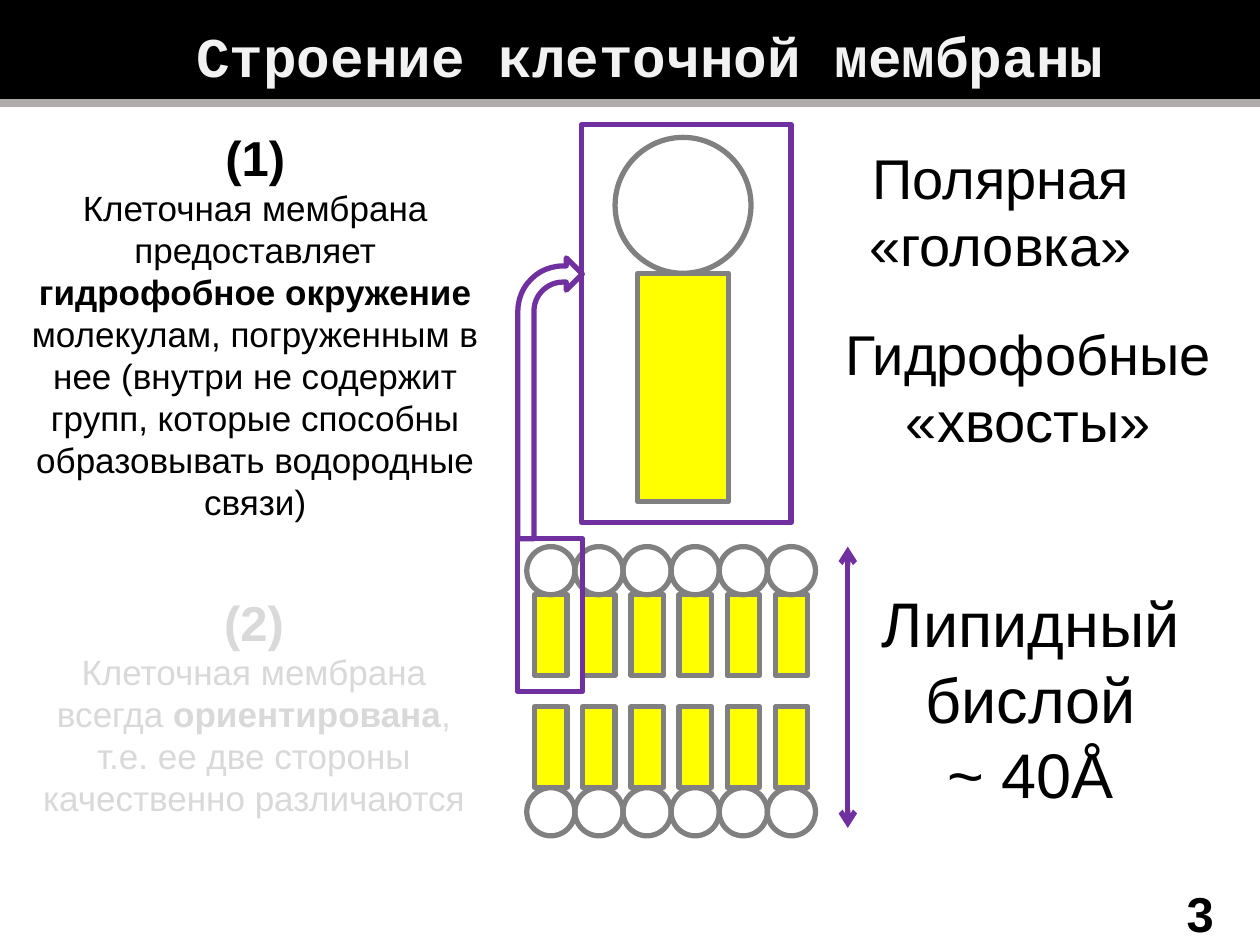
from lxml import etree
from pptx import Presentation
from pptx.dml.color import RGBColor
from pptx.enum.shapes import MSO_CONNECTOR, MSO_SHAPE
from pptx.enum.text import MSO_ANCHOR, PP_ALIGN
from pptx.oxml.ns import qn
from pptx.util import Cm, Pt

RECT, OVAL, BENT = MSO_SHAPE.RECTANGLE, MSO_SHAPE.OVAL, MSO_SHAPE.BENT_ARROW
LINE = MSO_CONNECTOR.STRAIGHT
TOP, MID = MSO_ANCHOR.TOP, MSO_ANCHOR.MIDDLE
CENTER = PP_ALIGN.CENTER

BLACK, WHITE, PALE = "000000", "FFFFFF", "F2F2F2"
GREY, SILVER = "808080", "AFABAB"
YELLOW, PURPLE = "FFFF00", "7030A0"


def color(code):
    return RGBColor.from_string(code)


class Page:
    """Holds the slide and the style shared by its elements."""

    font = "Arial"
    stroke = 3

    def __init__(self, slide):
        self.slide = slide
        self.shapes = slide.shapes

    def shape(self, kind, x, y, w, h, fill=None, line=None, alpha=None):
        item = self.shapes.add_shape(kind, Cm(x), Cm(y), Cm(w), Cm(h))
        item.shadow.inherit = False
        if fill:
            item.fill.solid()
            item.fill.fore_color.rgb = color(fill)
        else:
            item.fill.background()
        if alpha:
            tint = item.fill._xPr.find(qn("a:solidFill"))[0]
            etree.SubElement(tint, qn("a:alpha")).set("val", str(alpha * 1000))
        if line:
            item.line.color.rgb = color(line)
            item.line.width = Pt(self.stroke)
        else:
            item.line.fill.background()
        return item

    def line(self, x1, y1, x2, y2, tone, width, arrows=False):
        item = self.shapes.add_connector(LINE, Cm(x1), Cm(y1), Cm(x2), Cm(y2))
        item.line.color.rgb = color(tone)
        item.line.width = Pt(width)
        props = item._element.spPr
        if arrows:
            ln = props.find(qn("a:ln"))
            for end in ("a:headEnd", "a:tailEnd"):
                etree.SubElement(ln, qn(end)).set("type", "arrow")
        etree.SubElement(props, qn("a:effectLst"))

    def text(self, x, y, w, h, paras, font=None, tone=BLACK, anchor=TOP):
        """Each paragraph is a list of runs: (words, size, bold)."""
        box = self.shapes.add_textbox(Cm(x), Cm(y), Cm(w), Cm(h))
        frame = box.text_frame
        frame.word_wrap = True
        frame.vertical_anchor = anchor
        for i, runs in enumerate(paras):
            para = frame.add_paragraph() if i else frame.paragraphs[0]
            para.alignment = CENTER
            for words, size, bold in runs:
                run = para.add_run()
                run.text = words
                run.font.name = font or self.font
                run.font.size = Pt(size)
                run.font.bold = bold
                run.font.color.rgb = color(tone)
        return frame

    def lipid(self, x, head, tail, size, width, length):
        """Draws one lipid: a round head at y head, a tail at y tail."""
        left = x + (size - width) / 2
        self.shape(RECT, left, tail, width, length, YELLOW, GREY)
        self.shape(OVAL, x, head, size, size, line=GREY)


def main():
    deck = Presentation()
    deck.slide_width, deck.slide_height = Cm(25.4), Cm(19.05)
    page = Page(deck.slides.add_slide(deck.slide_layouts[6]))

    page.shape(RECT, 0, 0, 25.4, 2.06, BLACK)
    title = page.text(1.68, 0.36, 22.86, 1.42,
                      [[("Строение клеточной мембраны", 32, True)]],
                      "Courier New", PALE, MID)
    title.margin_left = title.margin_right = title.margin_bottom = 0
    title.margin_top = Cm(0.1)
    page.text(23.19, 17.68, 2.01, 1.37, [[("3", 28, True)]])

    # Bilayer
    pitch = 0.97
    for i in range(6):
        for head, tail in ((11.02, 11.99), (15.88, 14.25)):
            page.lipid(10.62 + i * pitch, head, tail, pitch, 0.65, 1.63)

    # Enlarged lipid
    page.lipid(12.4, 2.77, 5.51, 2.74, 1.83, 4.6)
    page.shape(RECT, 11.73, 2.51, 4.22, 8.03, line=PURPLE)
    page.shape(RECT, 10.44, 10.86, 1.3, 3.08, line=PURPLE)
    bend = page.shape(BENT, 10.44, 5.2, 1.3, 5.66, line=PURPLE)
    bend.adjustments[3] = 0.7
    page.line(17.09, 11.02, 17.09, 16.69, PURPLE, 3, arrows=True)

    # Labels
    page.text(15.88, 2.77, 8.59, 2.41, [[("Полярная «головка»", 32, False)]])
    page.text(16.59, 6.32, 8.28, 3, [[("Гидрофобные «хвосты»", 32, False)]])
    page.text(17.4, 11.66, 6.76, 4.88,
              [[(words, 36, False)]
               for words in ("Липидный ", "бислой", "~ 40Å")])

    # Statements
    page.text(0, 2.44, 10.29, 8.28, [
        [("(1)", 28, True)],
        [("Клеточная мембрана предоставляет ", 20, False),
         ("гидрофобное окружение ", 20, True),
         ("молекулам, погруженным в нее (внутри не содержит групп, которые "
          "способны образовывать водородные связи)", 20, False)]])
    page.text(0.46, 11.81, 9.32, 4.88, [
        [("(2)", 28, True)],
        [("Клеточная мембрана всегда ", 20, False),
         ("ориентирована", 20, True),
         (", т.е. ее две стороны качественно различаются", 20, False)]])
    page.shape(RECT, 0.46, 11.66, 9.32, 5.38, WHITE, alpha=85)
    page.line(25.4, 2.08, 0, 2.08, SILVER, 4.75)

    deck.save("out.pptx")


if __name__ == "__main__":
    main()
